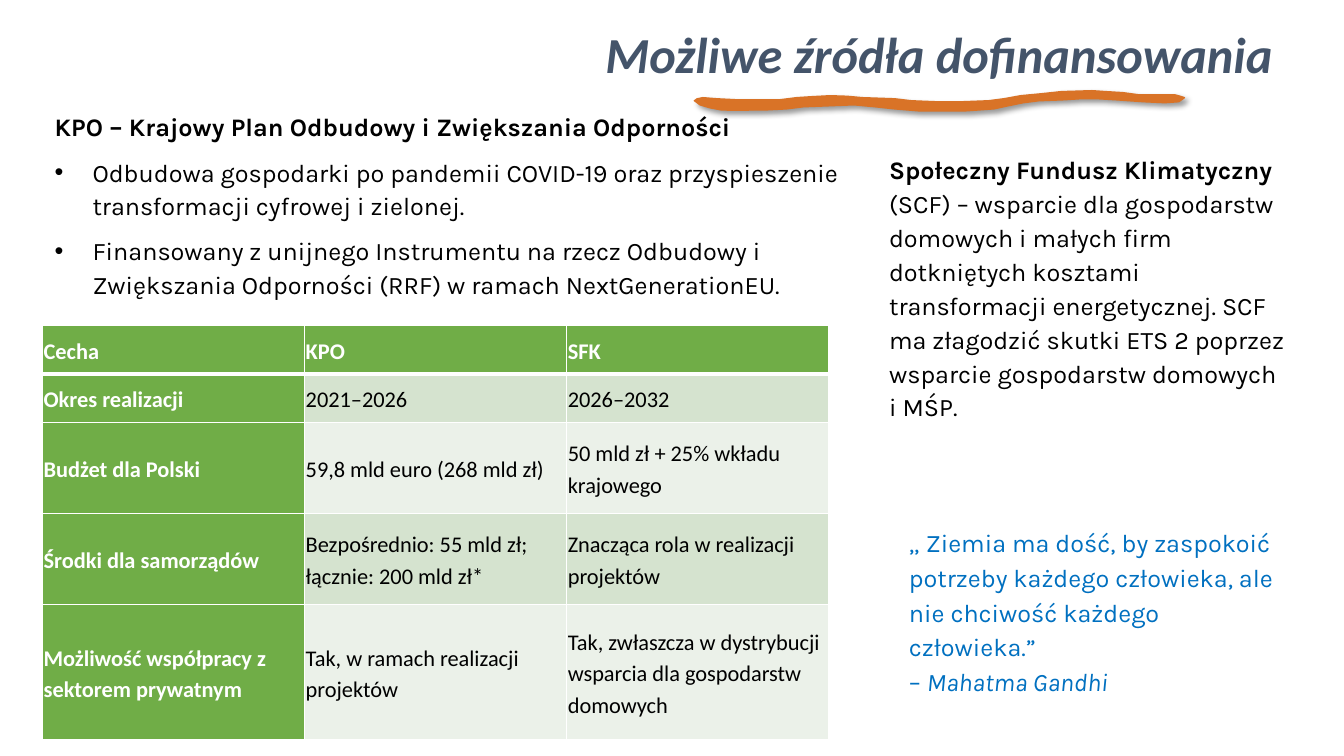
from dataclasses import dataclass
from lxml import etree
from pptx import Presentation
from pptx.dml.color import RGBColor
from pptx.enum.text import MSO_ANCHOR, MSO_AUTO_SIZE, PP_ALIGN
from pptx.oxml import parse_xml
from pptx.oxml.ns import qn
from pptx.util import Pt

BOTTOM, MIDDLE = MSO_ANCHOR.BOTTOM, MSO_ANCHOR.MIDDLE
CENTER = PP_ALIGN.CENTER
NO_FIT = MSO_AUTO_SIZE.NONE
A_NS = "http://schemas.openxmlformats.org/drawingml/2006/main"


@dataclass(frozen=True)
class Theme:
    head: str = "44546A"
    ink: str = "000000"
    white: str = "FFFFFF"
    green: str = "70AD47"
    bands: tuple = ("D5E3CF", "EBF1E9")
    stroke: str = "D97327"
    quote: str = "0070C0"
    sans: str = "Calibri"
    body: str = "Karla"
    title_size: int = 36
    body_size: int = 18
    cell_size: int = 16


T = Theme()
BODY = dict(name=T.body, size=Pt(T.body_size), color=T.ink)

ROWS = [
    ("Cecha", "KPO", "SFK"),
    ("Okres realizacji", "2021–2026", "2026–2032"),
    ("Budżet dla Polski", "59,8 mld euro (268 mld zł)",
     "50 mld zł + 25% wkładu krajowego"),
    ("Środki dla samorządów", "Bezpośrednio: 55 mld zł; łącznie: 200 mld zł*",
     "Znacząca rola w realizacji projektów"),
    ("Możliwość współpracy z sektorem prywatnym",
     "Tak, w ramach realizacji projektów",
     "Tak, zwłaszcza w dystrybucji wsparcia dla gospodarstw domowych"),
]
HEIGHTS = (34.6, 34.6, 65, 65, 97)

# Outline of the brush stroke, clockwise, from the corner of its box
STROKE = [
    (16, 5.8), (30, 6.5), (61, 6.5), (73, 5), (84, 4.3), (97, 3.6), (109, 4),
    (120, 5), (143, 5.8), (155, 7.2), (172, 7.9), (192, 7.9), (210, 7.2),
    (221, 5.8), (233, 3.6), (248, 2.2), (262, 0.7), (284, 0), (294, 0.7),
    (306, 1.4), (317, 2.9), (343, 2.9), (348, 4.3), (350, 5), (348, 6.5),
    (346, 7.9), (336, 8.6), (321, 7.9), (311, 7.2), (301, 6.5), (289, 5.8),
    (275, 5.8), (264, 6.5), (246, 7.2), (235, 8.6), (224, 10.8), (214, 13),
    (204, 13.7), (194, 14.4), (160, 14.4), (143, 13), (129, 11.5),
    (114, 10.1), (96, 10.8), (78, 11.5), (66, 13), (52, 13.7), (27, 14),
    (19, 13.7), (11, 12.2), (4, 10.1), (1, 7.9), (0, 7.2), (2, 5.8), (6, 5),
]


def apply(item, values):
    for key, value in values.items():
        setattr(item, key, value)


def write(para, text, color, **font):
    """Add text as runs, with a line break at each newline."""
    for num, line in enumerate(text.split("\n")):
        if num:
            para.add_line_break()
        run = para.add_run()
        run.text = line
        run.font.color.rgb = RGBColor.from_string(color)
        apply(run.font, font)


def frame(slide, box):
    text = slide.shapes.add_textbox(*map(Pt, box)).text_frame
    text.word_wrap = True
    return text


def bullet(para):
    props = para._p.get_or_add_pPr()
    props.set("marL", str(Pt(27)))
    props.set("indent", str(Pt(-27)))
    font = etree.SubElement(props, qn("a:buFont"))
    font.set("typeface", "Arial")
    etree.SubElement(props, qn("a:buChar")).set("char", "•")


def add_title(slide, box):
    title = slide.shapes.title
    apply(title, dict(zip(("left", "top", "width", "height"), map(Pt, box))))
    text = title.text_frame
    apply(text, dict(vertical_anchor=BOTTOM, word_wrap=True, auto_size=NO_FIT))
    para = text.paragraphs[0]
    apply(para, dict(alignment=CENTER, line_spacing=0.9, space_after=Pt(6)))
    write(para, "Możliwe źródła dofinansowania", T.head, name=T.sans,
          size=Pt(T.title_size), bold=True, italic=True)


def add_plan(slide, box):
    text = frame(slide, box)
    head = text.paragraphs[0]
    apply(head, dict(line_spacing=1.5, space_after=Pt(8)))
    write(head, "KPO – Krajowy Plan Odbudowy i Zwiększania Odporności",
          bold=True, **BODY)
    for line in (
        "Odbudowa gospodarki po pandemii COVID-19 oraz przyspieszenie "
        "transformacji cyfrowej i zielonej.",
        "Finansowany z unijnego Instrumentu na rzecz Odbudowy i "
        "Zwiększania Odporności (RRF) w ramach NextGenerationEU.",
    ):
        para = text.add_paragraph()
        apply(para, dict(line_spacing=1.12, space_after=Pt(8)))
        bullet(para)
        write(para, line, **BODY)


def add_fund(slide, box):
    para = frame(slide, box).paragraphs[0]
    para.line_spacing = 1.12
    write(para, "Społeczny Fundusz Klimatyczny", bold=True, **BODY)
    write(para, " (SCF) – wsparcie dla gospodarstw domowych i małych firm "
          "dotkniętych kosztami transformacji energetycznej. SCF ma złagodzić "
          "skutki ETS 2 poprzez wsparcie gospodarstw domowych i MŚP.", **BODY)


def add_quote(slide, box):
    para = frame(slide, box).paragraphs[0]
    apply(para, dict(line_spacing=1.15, space_after=Pt(8)))
    font = BODY | dict(color=T.quote)
    write(para, "„ Ziemia ma dość, by zaspokoić potrzeby każdego człowieka, "
          "ale nie chciwość każdego człowieka.”\n– ", **font)
    write(para, "Mahatma Gandhi", italic=True, **font)


def edge(cell, row):
    """Draw white cell borders, thicker under the header row."""
    widths = dict(lnL=1, lnR=1, lnT=3 if row == 1 else 1,
                  lnB=3 if row == 0 else 1)
    props = cell._tc.get_or_add_tcPr()
    for spot, (tag, width) in enumerate(widths.items()):
        props.insert(spot, parse_xml(
            f'<a:{tag} xmlns:a="{A_NS}" w="{Pt(width)}"><a:solidFill>'
            f'<a:srgbClr val="{T.white}"/></a:solidFill></a:{tag}>'))


def add_grid(slide, box):
    table = slide.shapes.add_table(len(ROWS), 3, *map(Pt, box)).table
    for col in table.columns:
        col.width = Pt(box[2] / 3)
    for row, (words, height) in enumerate(zip(ROWS, HEIGHTS)):
        table.rows[row].height = Pt(height)
        for col, word in enumerate(words):
            cell = table.cell(row, col)
            head = row == 0 or col == 0
            fill = T.green if head else T.bands[(row - 1) % 2]
            cell.fill.solid()
            cell.fill.fore_color.rgb = RGBColor.from_string(fill)
            edge(cell, row)
            sides = ("left", "top", "right", "bottom")
            apply(cell, {f"margin_{side}": Pt(0.7) for side in sides})
            cell.vertical_anchor = MIDDLE
            para = cell.text_frame.paragraphs[0]
            apply(para, dict(line_spacing=1.15, space_after=Pt(8)))
            write(para, word, T.white if head else T.ink, name=T.sans,
                  size=Pt(T.cell_size), bold=head)


def add_stroke(slide, left, top):
    points = [(Pt(x), Pt(y)) for x, y in STROKE]
    path = slide.shapes.build_freeform(*points[0])
    path.add_line_segments(points[1:], close=True)
    shape = path.convert_to_shape(Pt(left), Pt(top))
    color = RGBColor.from_string(T.stroke)
    shape.fill.solid()
    shape.fill.fore_color.rgb = color
    shape.line.color.rgb = color
    shape.line.width = Pt(1)
    shape._element.spPr.append(parse_xml(
        f'<a:effectLst xmlns:a="{A_NS}"><a:outerShdw blurRad="{Pt(4)}" '
        f'dist="{Pt(3)}" dir="2700000" algn="tl" rotWithShape="0">'
        f'<a:srgbClr val="{T.ink}"><a:alpha val="40000"/></a:srgbClr>'
        '</a:outerShdw></a:effectLst>'))


def main():
    deck = Presentation()
    deck.slide_width, deck.slide_height = Pt(960), Pt(540)
    slide = deck.slides.add_slide(deck.slide_layouts[5])
    add_title(slide, (381.6, 5, 578.4, 59))
    add_plan(slide, (32, 65.5, 578, 152.6))
    add_fund(slide, (628, 104.4, 297.4, 177))
    add_grid(slide, (30.5, 232.5, 561.6, sum(HEIGHTS)))
    add_stroke(slide, 496, 64.8)
    add_quote(slide, (642.2, 370, 278.6, 131))
    deck.save("out.pptx")


if __name__ == "__main__":
    main()
